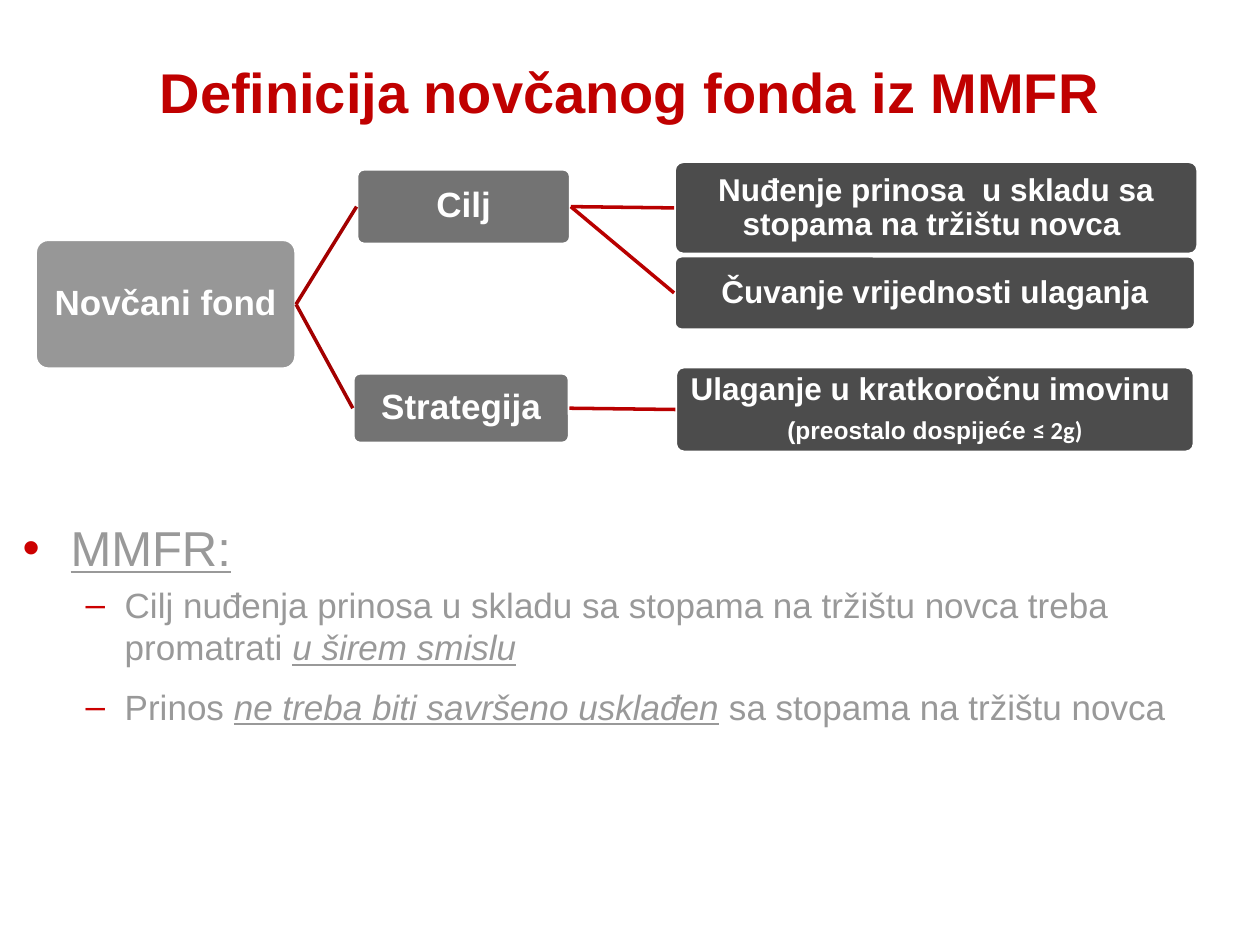
from lxml import etree
from pptx import Presentation
from pptx.dml.color import RGBColor
from pptx.enum.shapes import MSO_CONNECTOR, MSO_SHAPE
from pptx.enum.text import MSO_ANCHOR, MSO_AUTO_SIZE, PP_ALIGN
from pptx.oxml.ns import qn
from pptx.util import Inches, Pt

CENTER, LEFT = PP_ALIGN.CENTER, PP_ALIGN.LEFT
MIDDLE, TOP = MSO_ANCHOR.MIDDLE, MSO_ANCHOR.TOP
ROUNDED, STRAIGHT = MSO_SHAPE.ROUNDED_RECTANGLE, MSO_CONNECTOR.STRAIGHT

COLORS = {
    "title": "C00000", "white": "FFFFFF", "body": "999999", "bullet": "CC0000",
    "level0": "979797", "level1": "737373", "level2": "4C4C4C",
    "link1": "A30000", "link2": "B90000",
}

# Content: a paragraph is a list of (text, format) spans
TITLE = "Definicija novčanog fonda iz MMFR"
EMPHASIS = {"italic": True, "underline": True}

# Tree nodes: name, parent, level, (left, top, width, height), paragraphs
NODES = [
    ("fund", None, 0, (0.28, 1.9, 2.07, 1.03), [[("Novčani fond", {})]]),
    ("goal", "fund", 1, (2.83, 1.34, 1.7, 0.6), [[("Cilj", {})]]),
    ("yield", "goal", 2, (5.35, 1.28, 4.16, 0.74),
     [[("Nuđenje prinosa  u skladu sa stopama na tržištu novca ", {})]]),
    ("value", "goal", 2, (5.35, 2.03, 4.14, 0.59),
     [[("Čuvanje vrijednosti ulaganja", {})]]),
    ("strategy", "fund", 1, (2.8, 2.96, 1.72, 0.56), [[("Strategija", {})]]),
    ("assets", "strategy", 2, (5.36, 2.91, 4.12, 0.68),
     [[("Ulaganje u kratkoročnu imovinu ", {})],
      [("(preostalo dospijeće ", {"size": 14}),
       ("≤ 2g)", {"size": 14, "font": "Calibri"})]]),
]
NODE_SIZES = (20, 20, 18)

# Body: level, space before, space after, spans
BULLETS = [
    (0, 0, 0, [("MMFR:", {"underline": True})]),
    (1, 4, 6, [("Cilj nuđenja prinosa u skladu sa stopama na tržištu novca "
                "treba promatrati ", {}), ("u širem smislu", EMPHASIS)]),
    (1, 4, 0, [("Prinos ", {}), ("ne treba biti savršeno usklađen", EMPHASIS),
               (" sa stopama na tržištu novca", {})]),
]
# Per level: bullet sign, text indent, hanging indent, text size
BULLET_STYLES = [("•", 0.38, -0.38, 28), ("–", 0.81, -0.31, 20)]


def color(name):
    return RGBColor.from_string(COLORS[name])


def write(para, spans, align=LEFT, **base):
    """Add spans to a paragraph; each span's format overrides the base."""
    para.alignment = align
    for text, own in spans:
        style = {**base, **own}
        span = para.add_run()
        span.text = text
        span.font.name = style.get("font", "Arial")
        span.font.size = Pt(style["size"])
        span.font.color.rgb = color(style["fill"])
        span.font.bold = style.get("bold", False)
        span.font.italic = style.get("italic", False)
        span.font.underline = style.get("underline", False)


def place(shape, left, top, width, height):
    shape.left, shape.top = Inches(left), Inches(top)
    shape.width, shape.height = Inches(width), Inches(height)


def paragraphs(frame, count):
    return [frame.paragraphs[0]] + [frame.add_paragraph() for _ in range(count - 1)]


def add_bullet(para, sign):
    properties = para._p.get_or_add_pPr()
    tint = etree.SubElement(properties, qn("a:buClr"))
    etree.SubElement(tint, qn("a:srgbClr"), val=COLORS["bullet"])
    etree.SubElement(properties, qn("a:buFont"), typeface="Arial")
    etree.SubElement(properties, qn("a:buChar"), char=sign)


def add_link(page, parent, child, level):
    """Join the right middle of the parent to the left middle of the child."""
    line = page.shapes.add_connector(
        STRAIGHT, parent.left + parent.width, parent.top + parent.height // 2,
        child.left, child.top + child.height // 2)
    line.line.color.rgb = color(f"link{level}")
    line.line.width = Pt(2)
    etree.SubElement(line._element.spPr, qn("a:effectLst"))


def add_node(page, level, area, texts):
    box = page.shapes.add_shape(ROUNDED, *map(Inches, area))
    box.adjustments[0] = 0.1
    box.shadow.inherit = False
    box.fill.solid()
    box.fill.fore_color.rgb = color(f"level{level}")
    box.line.color.rgb = color("white")
    box.line.width = Pt(2)
    frame = box.text_frame
    frame.word_wrap = True
    frame.vertical_anchor = MIDDLE
    frame.margin_left = frame.margin_right = Inches(0.01)
    frame.margin_top = frame.margin_bottom = Inches(0.01)
    size = NODE_SIZES[level]
    for para, spans in zip(paragraphs(frame, len(texts)), texts):
        para.line_spacing = 0.9
        para.space_after = Pt(size * 0.35)
        write(para, spans, align=CENTER, size=size, fill="white", bold=True)
    return box


def main():
    deck = Presentation()
    deck.slide_width, deck.slide_height = Inches(10), Inches(7.5)
    page = deck.slides.add_slide(deck.slide_layouts[1])

    # Title
    title = page.shapes.title
    place(title, 0.5, 0.3, 9, 0.85)
    title.text_frame.vertical_anchor = MIDDLE
    write(title.text_frame.paragraphs[0], [(TITLE, {})], align=CENTER,
          size=32, fill="title", bold=True)

    # Tree of boxes, with the links above their parents
    boxes = {}
    for name, parent, level, area, texts in NODES:
        boxes[name] = add_node(page, level, area, texts)
        if parent:
            add_link(page, boxes[parent], boxes[name], level)

    # Bulleted body
    body = page.placeholders[1]
    place(body, 0.08, 4.06, 9.88, 2.99)
    frame = body.text_frame
    frame.word_wrap = True
    frame.auto_size = MSO_AUTO_SIZE.NONE
    frame.vertical_anchor = TOP
    for para, item in zip(paragraphs(frame, len(BULLETS)), BULLETS):
        level, before, after, spans = item
        sign, indent, hanging, size = BULLET_STYLES[level]
        para.level = level
        para.space_before, para.space_after = Pt(before), Pt(after)
        properties = para._p.get_or_add_pPr()
        properties.set("marL", str(Inches(indent)))
        properties.set("indent", str(Inches(hanging)))
        add_bullet(para, sign)
        write(para, spans, size=size, fill="body")

    deck.save("out.pptx")


if __name__ == "__main__":
    main()
